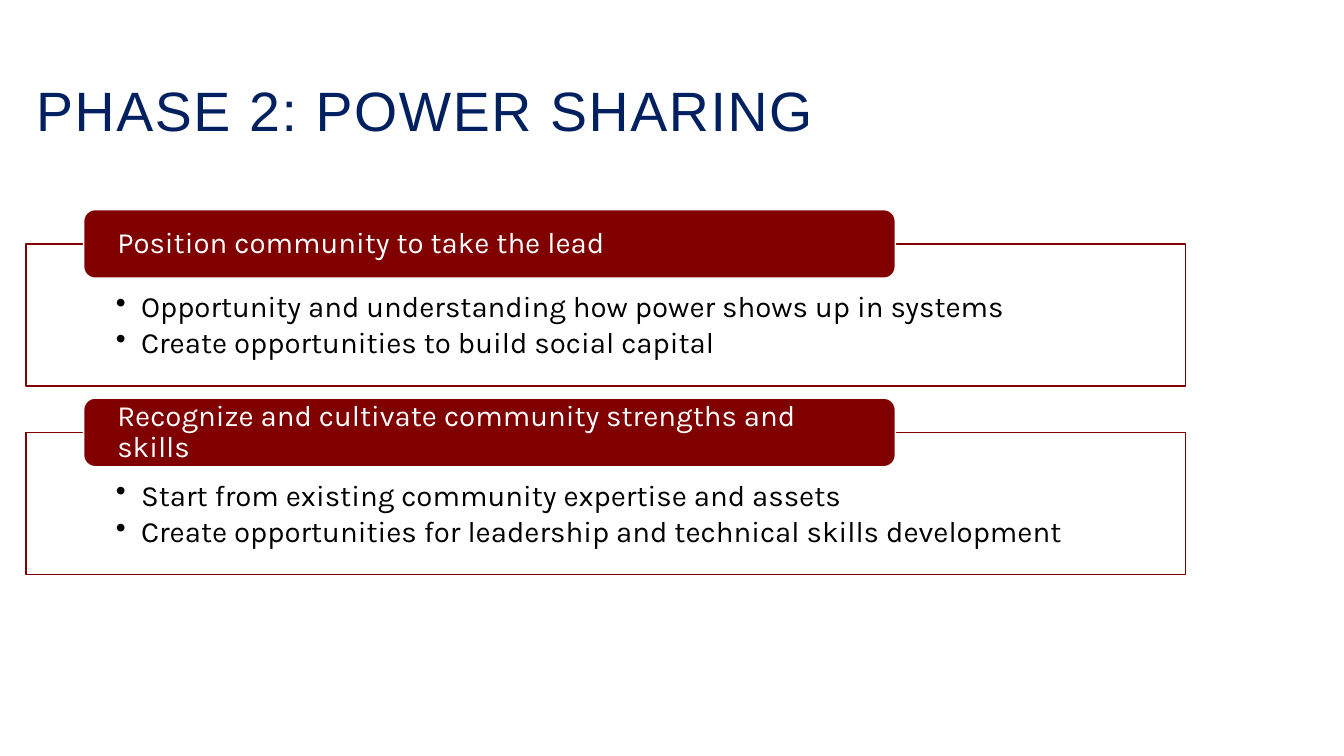
from lxml.etree import SubElement
from pptx import Presentation
from pptx.dml.color import RGBColor
from pptx.enum.shapes import MSO_SHAPE
from pptx.enum.text import MSO_ANCHOR, PP_ALIGN
from pptx.oxml.ns import qn
from pptx.util import Inches, Pt

COLORS = {"navy": "002060", "maroon": "800000", "white": "FFFFFF", "black": "000000"}

SECTIONS = [
    ("Position community to take the lead",
     ["Opportunity and understanding how power shows up in systems",
      "Create opportunities to build social capital"]),
    ("Recognize and cultivate community strengths and skills",
     ["Start from existing community expertise and assets",
      "Create opportunities for leadership and technical skills development"]),
]
SECTIONS_TOP = 2.08
SECTION_PITCH = 1.87
PANEL_OFFSET = 0.34


class PhaseSlide:
    title_font = "Arial"
    body_font = "Karla"
    body_size = 21

    def __init__(self, presentation):
        self.slide = presentation.slides.add_slide(presentation.slide_layouts[6])

    def color(self, name):
        return RGBColor.from_string(COLORS[name])

    def frame(self, shape, insets, anchor):
        text_frame = shape.text_frame
        text_frame.word_wrap = True
        text_frame.vertical_anchor = anchor
        (text_frame.margin_left, text_frame.margin_top,
         text_frame.margin_right, text_frame.margin_bottom) = map(Inches, insets)
        return text_frame

    def add_text(self, paragraph, text, font, size, color):
        paragraph.alignment = PP_ALIGN.LEFT
        run = paragraph.add_run()
        run.text = text
        run.font.name = font
        run.font.size = Pt(size)
        run.font.color.rgb = self.color(color)
        return run

    def box(self, kind, place, fill, line):
        shape = self.slide.shapes.add_shape(kind, *map(Inches, place))
        shape.shadow.inherit = False
        shape.fill.solid()
        shape.fill.fore_color.rgb = self.color(fill)
        shape.line.color.rgb = self.color(line)
        shape.line.width = Pt(1)
        return shape

    def title(self, text):
        shape = self.slide.shapes.add_textbox(*map(Inches, (0.26, 0.74, 12.86, 1.06)))
        text_frame = self.frame(shape, (0.1, 0, 0.1, 0.39), MSO_ANCHOR.BOTTOM)
        run = self.add_text(text_frame.paragraphs[0], text, self.title_font, 39.6, "navy")
        run._r.get_or_add_rPr().set("spc", "120")

    def panel(self, top, bullets):
        shape = self.box(MSO_SHAPE.RECTANGLE, (0.26, top, 11.5, 1.41), "white", "maroon")
        fill_color = shape._element.spPr.find(qn("a:solidFill"))[0]
        SubElement(fill_color, qn("a:alpha"), val="90000")
        text_frame = self.frame(shape, (0.89, 0.48, 0.89, 0.16), MSO_ANCHOR.TOP)
        for index, text in enumerate(bullets):
            paragraph = text_frame.add_paragraph() if index else text_frame.paragraphs[0]
            properties = paragraph._p.get_or_add_pPr()
            properties.set("marL", str(Inches(0.25)))
            properties.set("indent", str(Inches(-0.25)))
            SubElement(properties, qn("a:buChar"), char="•")
            paragraph.line_spacing = 0.9
            paragraph.space_after = Pt(3.15)
            self.add_text(paragraph, text, self.body_font, self.body_size, "black")

    def header(self, top, text):
        shape = self.box(MSO_SHAPE.ROUNDED_RECTANGLE, (0.83, top, 8.05, 0.68), "maroon", "white")
        text_frame = self.frame(shape, (0.3, 0, 0.3, 0), MSO_ANCHOR.MIDDLE)
        paragraph = text_frame.paragraphs[0]
        paragraph.line_spacing = 0.9
        self.add_text(paragraph, text, self.body_font, self.body_size, "white")


def main():
    presentation = Presentation()
    presentation.slide_width = Inches(13.33)
    presentation.slide_height = Inches(7.5)
    phase = PhaseSlide(presentation)
    phase.title("PHASE 2: POWER SHARING")
    for index, (heading, bullets) in enumerate(SECTIONS):
        top = SECTIONS_TOP + index * SECTION_PITCH
        phase.panel(top + PANEL_OFFSET, bullets)
        phase.header(top, heading)
    presentation.save("out.pptx")


if __name__ == "__main__":
    main()
